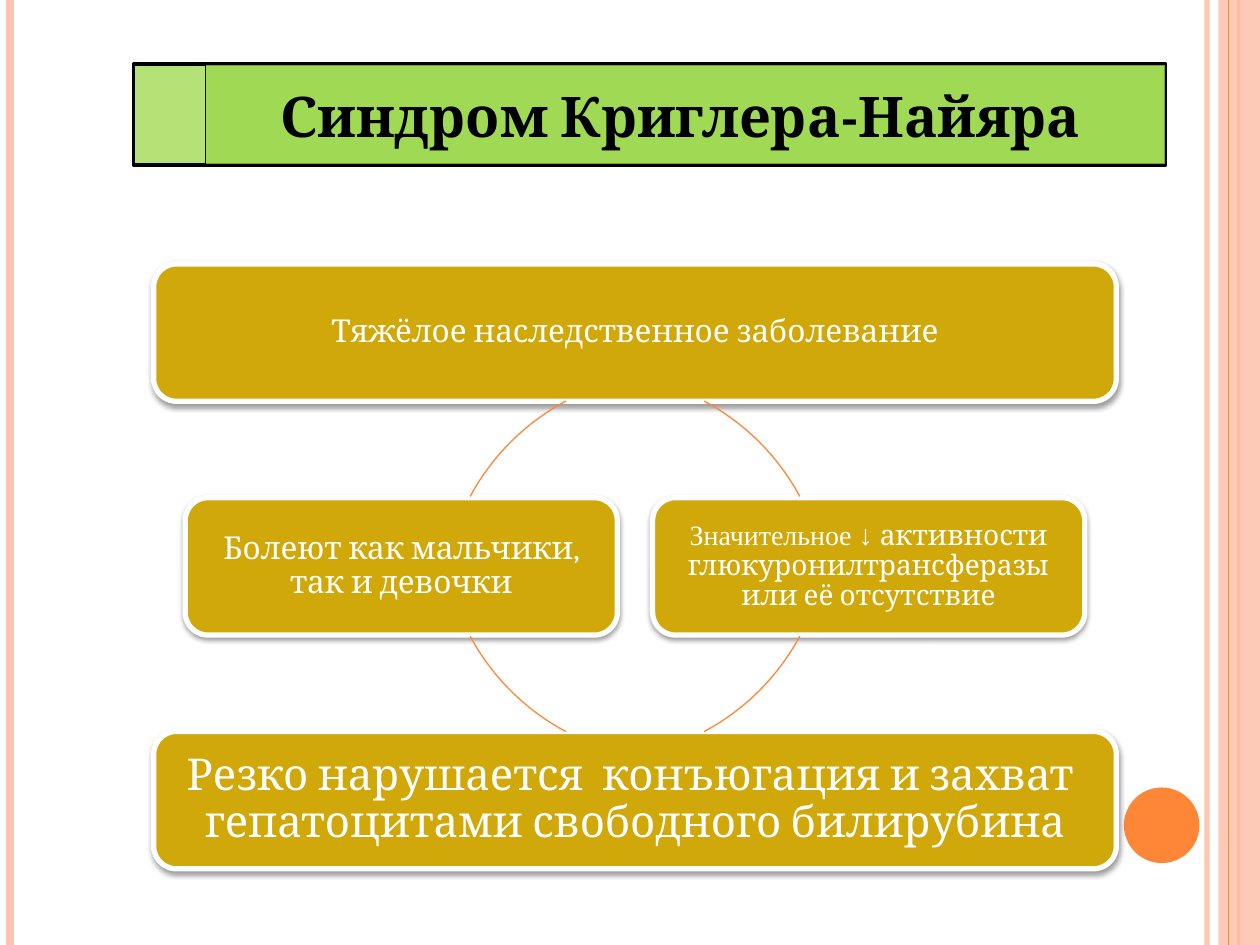
from dataclasses import dataclass

from lxml import etree
from pptx import Presentation
from pptx import util as u
from pptx.dml.color import RGBColor
from pptx.enum import shapes, text
from pptx.oxml.ns import qn

SHAPE = shapes.MSO_SHAPE


@dataclass(frozen=True)
class Theme:
    orange: str = "FE8637"
    peach: str = "FEC3AE"
    green: str = "9AD848"
    gold: str = "D0A80A"
    black: str = "000000"
    white: str = "FFFFFF"
    font: str = "Cambria"
    alt_font: str = "Times New Roman"
    title: int = 32
    large: int = 25
    body: int = 18
    small: int = 16


def rgb(value):
    return RGBColor.from_string(value)


def set_alpha(fill, percent):
    color = fill._xPr.find(qn("a:solidFill"))[0]
    etree.SubElement(color, qn("a:alpha"), val=str(percent * 1000))


class SlideBuilder:
    def __init__(self, slide, theme):
        self.s = slide
        self.theme = theme

    def shape(self, kind, box, fill=None, line=None, width=0.75, alpha=None):
        sp = self.s.shapes.add_shape(kind, *map(u.Inches, box))
        sp.shadow.inherit = False
        if fill:
            sp.fill.solid()
            sp.fill.fore_color.rgb = rgb(fill)
            if alpha:
                set_alpha(sp.fill, alpha)
        else:
            sp.fill.background()
        if line:
            sp.line.color.rgb = rgb(line)
            sp.line.width = u.Pt(width)
        else:
            sp.line.fill.background()
        return sp

    def stripe(self, x, color, width, alpha=None):
        """Draw a vertical line over the full slide height."""
        ln = self.s.shapes.add_connector(
            shapes.MSO_CONNECTOR.STRAIGHT,
            u.Inches(x), 0, u.Inches(x), u.Inches(7.5))
        ln.line.color.rgb = rgb(color)
        ln.line.width = u.Pt(width)
        if alpha:
            set_alpha(ln.line.fill, alpha)
        etree.SubElement(ln._element.spPr, qn("a:effectLst"))

    def add_lines(self, tf, lines, color, bold=False):
        """Fill one centred paragraph; each line is a list of (text, size, font)."""
        tf.word_wrap = True
        p = tf.paragraphs[0]
        p.alignment = text.PP_ALIGN.CENTER
        for i, runs in enumerate(lines):
            if i:
                p.add_line_break()
            for words, size, font in runs:
                r = p.add_run()
                r.text = words
                r.font.size = u.Pt(size)
                r.font.name = font
                r.font.bold = bold
                r.font.color.rgb = rgb(color)
        return p

    def title(self, words, box):
        tb = self.s.shapes.add_textbox(*map(u.Inches, box))
        self.add_lines(tb.text_frame, [[(words, self.theme.title, self.theme.font)]],
                       self.theme.black, bold=True)

    def card(self, box, lines):
        t = self.theme
        sp = self.shape(SHAPE.ROUNDED_RECTANGLE, box, t.gold, t.white, 3)
        self.drop_shadow(sp)
        tf = sp.text_frame
        tf.vertical_anchor = text.MSO_ANCHOR.MIDDLE
        tf.margin_left = tf.margin_right = u.Inches(0.03)
        tf.margin_top = tf.margin_bottom = u.Inches(0.03)
        self.add_lines(tf, lines, t.white).line_spacing = 0.9

    def drop_shadow(self, sp):
        effects = sp._element.spPr.find(qn("a:effectLst"))
        shadow = etree.SubElement(
            effects, qn("a:outerShdw"), blurRad=str(u.Pt(3.1)),
            dist=str(u.Pt(1.6)), dir="5400000", rotWithShape="0")
        color = etree.SubElement(shadow, qn("a:srgbClr"), val=self.theme.black)
        etree.SubElement(color, qn("a:alpha"), val="38000")

    def arc(self, cx, cy, radius, start, end):
        """Draw a clockwise arc; angles in degrees from the right."""
        sp = self.shape(SHAPE.ARC, (cx - radius, cy - radius, 2 * radius, 2 * radius),
                        line=self.theme.orange)
        for i, angle in enumerate((start, end)):
            sp.adjustments[i] = angle * 0.6  # 60000 units per degree / 100000


def add_frame(b):
    t = b.theme
    b.stripe(9.58, t.peach, 3, alpha=93)
    b.stripe(0.08, t.peach, 4.5)
    b.stripe(9.83, t.orange, 1.5)
    b.shape(SHAPE.RECTANGLE, (9.67, 0, 0.33, 7.5), t.peach, alpha=87)
    b.stripe(9.75, t.orange, 0.75)
    b.shape(SHAPE.OVAL, (8.92, 6.25, 0.6, 0.6), t.orange)


def add_title(b):
    t = b.theme
    banner = b.shape(SHAPE.PENTAGON, (1.06, 0.51, 8.19, 0.8), t.green, t.black, 2, 74)
    banner.rotation = 180
    banner.adjustments[0] = 0
    b.shape(SHAPE.RECTANGLE, (1.63, 0.51, 7.62, 0.8), t.green, t.black, alpha=74)
    b.title("Синдром Криглера-Найяра", (1.54, 0.6, 7.72, 1.18))


def add_cycle(b):
    t = b.theme
    center, middle, height, pitch = 5.04, 3.95, 1.09, 1.855
    wide, narrow, gap = 7.64, 3.43, 0.28
    left = center - wide / 2

    b.card((left, middle - pitch, wide, height),
           [[("Тяжёлое наследственное заболевание", t.body, t.font)]])
    b.card((center + gap / 2, middle, narrow, height),
           [[("Значительное ↓ ", t.small, t.alt_font),
             ("активности глюкуронилтрансферазы", t.small, t.font)],
            [("или её отсутствие", t.small, t.font)]])
    b.card((left, middle + pitch, wide, height),
           [[("Резко нарушается  конъюгация и захват  "
              "гепатоцитами свободного билирубина", t.large, t.font)]])
    b.card((center - gap / 2 - narrow, middle, narrow, height),
           [[("Болеют как мальчики, так и девочки", t.body, t.font)]])

    # Each quarter has its own centre, offset from the middle of the cycle
    axis_y, offset = middle + height / 2, 0.325
    low, high = 28.3, 61.9
    for sx, sy, start, end in ((-1, 1, 360 - high, 360 - low),
                               (-1, -1, low, high),
                               (1, -1, 180 - high, 180 - low),
                               (1, 1, 180 + low, 180 + high)):
        b.arc(center + sx * offset, axis_y + sy * offset, pitch, start, end)


def main():
    prs = Presentation()
    prs.slide_width, prs.slide_height = u.Inches(10), u.Inches(7.5)
    b = SlideBuilder(prs.slides.add_slide(prs.slide_layouts[6]), Theme())
    add_frame(b)
    add_title(b)
    add_cycle(b)
    prs.save("out.pptx")


if __name__ == "__main__":
    main()
